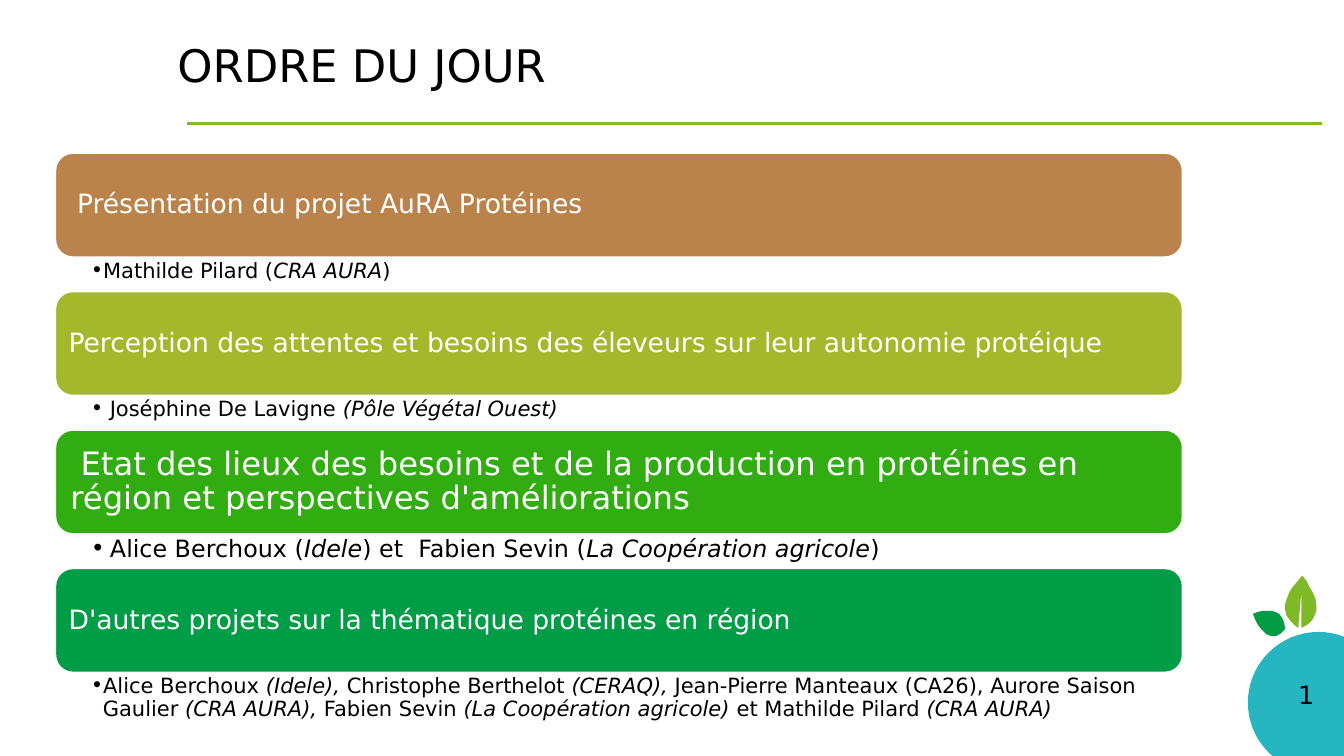
import math

import pptx
import pptx.dml.color
import pptx.enum.shapes
import pptx.enum.text
import pptx.oxml.ns
import pptx.util
from lxml import etree

WIDTH, HEIGHT = 40 / 3, 7.5
FONT = "DejaVu Sans"
COLORS = {
    "text": "000000", "white": "FFFFFF", "rule": "80BA27", "disc": "26B6C1",
    "leaf": "7FB927", "leaflet": "009C45",
    "brown": "BA834B", "olive": "A3B82A", "green": "31AD12", "emerald": "009C46",
}

# Agenda grid, in percent of the slide
LEFT, SPAN = 4.13, 83.85
TOP, PITCH, BAR = 20.27, 18.31, 13.73

# Each topic: colour, title, title size, title inset, speaker size, hanging
# indent, speaker rows height, then speakers as plain and italic parts in turn
TOPICS = [
    ("brown", " Présentation du projet AuRA Protéines", 19, 0.08, 15, 0.12, 4.53,
     ["Mathilde Pilard (", "CRA AURA", ")"]),
    ("olive", "Perception des attentes et besoins des éleveurs sur leur autonomie protéique",
     19, 0.08, 15, 0.12, 4.53,
     [" Joséphine De Lavigne ", "(Pôle Végétal Ouest)"]),
    ("green", " Etat des lieux des besoins et de la production en protéines en région "
     "et perspectives d'améliorations", 23, 0.1, 17, 0.19, 4.53,
     ["Alice Berchoux (", "Idele", ") et  Fabien Sevin (", "La Coopération agricole", ")"]),
    ("emerald", "D'autres projets sur la thématique protéines en région",
     19, 0.08, 15, 0.12, 6.93,
     ["Alice Berchoux ", "(Idele), ", "Christophe Berthelot ", "(CERAQ), ",
      "Jean-Pierre Manteaux (CA26), Aurore Saison Gaulier ", "(CRA AURA), ",
      "Fabien Sevin ", "(La Coopération agricole) ", "et Mathilde Pilard ", "(CRA AURA)"]),
]

# Leaf outlines, in inches
LEAF = [
    (12.92, 5.71), (12.87, 5.77), (12.82, 5.83), (12.79, 5.88), (12.77, 5.93),
    (12.75, 5.99), (12.75, 6.05), (12.76, 6.1), (12.78, 6.13), (12.81, 6.17),
    (12.84, 6.2), (12.88, 6.23), (12.91, 5.87), (12.91, 6.23), (12.95, 6.21),
    (12.98, 6.19), (13.02, 6.15), (13.04, 6.11), (13.06, 6.06), (13.06, 6),
    (13.05, 5.94), (13.03, 5.89), (12.99, 5.82), (12.96, 5.76),
]
LEAFLET = [
    (12.75, 6.24), (12.74, 6.18), (12.72, 6.13), (12.69, 6.09), (12.65, 6.07),
    (12.61, 6.06), (12.53, 6.06), (12.48, 6.07), (12.43, 6.09), (12.45, 6.14),
    (12.48, 6.2), (12.52, 6.25), (12.56, 6.29), (12.61, 6.31), (12.66, 6.31),
    (12.7, 6.29), (12.73, 6.26),
]


def share_x(percent):
    return pptx.util.Inches(WIDTH * percent / 100)


def share_y(percent):
    return pptx.util.Inches(HEIGHT * percent / 100)


def place(left, top, width, height):
    return share_x(left), share_y(top), share_x(width), share_y(height)


def rgb(name):
    return pptx.dml.color.RGBColor.from_string(COLORS[name])


def set_frame(frame, insets, anchor):
    frame.word_wrap = True
    frame.auto_size = pptx.enum.text.MSO_AUTO_SIZE.NONE
    frame.vertical_anchor = anchor
    (frame.margin_left, frame.margin_top,
     frame.margin_right, frame.margin_bottom) = map(pptx.util.Inches, insets)


def format_paragraph(para, size, color="text", spacing=0.9):
    para.alignment = pptx.enum.text.PP_ALIGN.LEFT
    para.line_spacing = spacing
    for span in para.runs:
        span.font.name = FONT
        span.font.size = pptx.util.Pt(size)
        span.font.color.rgb = rgb(color)


def add_bullet(para, indent):
    properties = para._p.get_or_add_pPr()
    hang = pptx.util.Inches(indent)
    properties.set("marL", str(hang))
    properties.set("indent", str(-hang))
    typeface = etree.SubElement(properties, pptx.oxml.ns.qn("a:buFont"))
    typeface.set("typeface", FONT)
    bullet = etree.SubElement(properties, pptx.oxml.ns.qn("a:buChar"))
    bullet.set("char", "•")


def add_title(page, text):
    title = page.shapes.title
    title.left, title.top, title.width, title.height = place(12.45, 2.7, 87.55, 12.53)
    title.text_frame.text = text
    set_frame(title.text_frame, (0.1, 0.05, 0.1, 0.05), pptx.enum.text.MSO_ANCHOR.MIDDLE)
    format_paragraph(title.text_frame.paragraphs[0], 32)


def add_rule(page):
    height = share_y(16.3)
    rule = page.shapes.add_connector(
        pptx.enum.shapes.MSO_CONNECTOR.STRAIGHT, share_x(13.95), height, share_x(98.33), height)
    rule.line.color.rgb = rgb("rule")
    rule.line.width = pptx.util.Pt(2.25)
    etree.SubElement(rule._element.spPr, pptx.oxml.ns.qn("a:effectLst"))


def add_outline(page, points, color):
    emu = [(pptx.util.Inches(x), pptx.util.Inches(y)) for x, y in points]
    builder = page.shapes.build_freeform(*emu[0])
    builder.add_line_segments(emu[1:], close=True)
    outline = builder.convert_to_shape()
    outline.shadow.inherit = False
    outline.fill.solid()
    outline.fill.fore_color.rgb = rgb(color)
    outline.line.fill.background()


def disc_points(center_x=13.08, center_y=6.97, radius=0.7, steps=40):
    """Disc cut off by the right and bottom edges of the slide."""
    start = -math.acos((WIDTH - center_x) / radius)
    end = -math.pi - math.asin((HEIGHT - center_y) / radius)
    angles = [start + (end - start) * step / steps for step in range(steps + 1)]
    arc = [(center_x + radius * math.cos(angle), center_y + radius * math.sin(angle))
           for angle in angles]
    return [(WIDTH, HEIGHT)] + arc


def add_page_number(page, number):
    box = page.shapes.add_textbox(*place(95.85, 89.2, 4.15, 5.33))
    box.text_frame.text = number
    set_frame(box.text_frame, (0.1, 0.05, 0, 0.05), pptx.enum.text.MSO_ANCHOR.TOP)
    format_paragraph(box.text_frame.paragraphs[0], 18, spacing=1.0)


def add_bar(page, top, color, text, size, inset):
    bar = page.shapes.add_shape(
        pptx.enum.shapes.MSO_SHAPE.ROUNDED_RECTANGLE, *place(LEFT, top, SPAN, BAR))
    bar.shadow.inherit = False
    bar.fill.solid()
    bar.fill.fore_color.rgb = rgb(color)
    bar.line.color.rgb = rgb("white")
    bar.line.width = pptx.util.Pt(1)
    bar.text_frame.text = text
    set_frame(bar.text_frame, [inset] * 4, pptx.enum.text.MSO_ANCHOR.MIDDLE)
    format_paragraph(bar.text_frame.paragraphs[0], size, "white")


def add_speakers(page, top, height, parts, size, indent):
    box = page.shapes.add_textbox(*place(LEFT, top, SPAN, height))
    set_frame(box.text_frame, (0.35, 0.03, 0.15, 0.03), pptx.enum.text.MSO_ANCHOR.TOP)
    para = box.text_frame.paragraphs[0]
    para.level = 1
    add_bullet(para, indent)
    for index, part in enumerate(parts):
        span = para.add_run()
        span.text = part
        span.font.italic = index % 2 == 1
    format_paragraph(para, size)


def main():
    deck = pptx.Presentation()
    deck.slide_width = pptx.util.Inches(WIDTH)
    deck.slide_height = pptx.util.Inches(HEIGHT)
    page = deck.slides.add_slide(deck.slide_layouts[5])

    # Heading and corner emblem
    add_rule(page)
    add_outline(page, disc_points(), "disc")
    add_outline(page, LEAF, "leaf")
    add_outline(page, LEAFLET, "leaflet")
    add_title(page, "ORDRE DU JOUR")
    add_page_number(page, "1")

    # Agenda
    for row, topic in enumerate(TOPICS):
        color, text, size, inset, speaker_size, indent, height, parts = topic
        top = TOP + row * PITCH
        add_bar(page, top, color, text, size, inset)
        add_speakers(page, top + BAR, height, parts, speaker_size, indent)

    deck.save("out.pptx")


if __name__ == "__main__":
    main()
